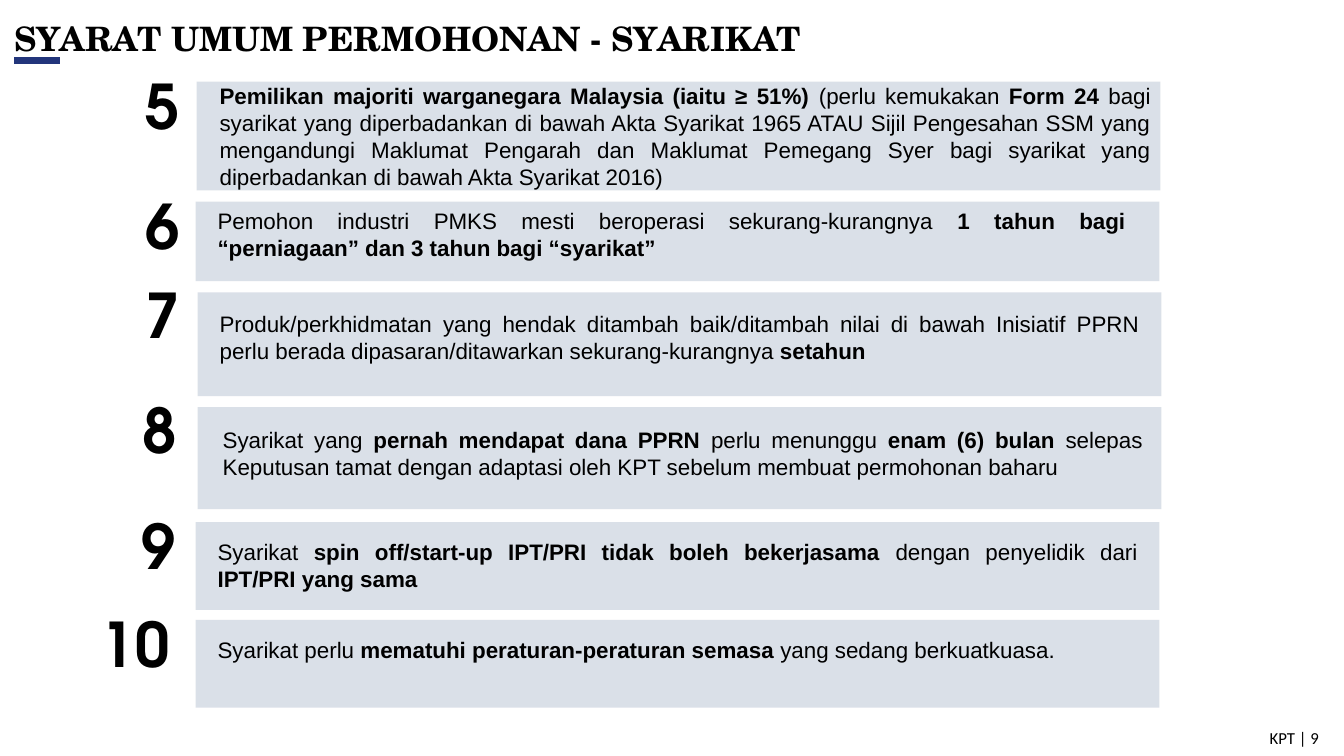
from lxml import etree
from pptx import Presentation
from pptx.dml.color import RGBColor
from pptx.enum.shapes import MSO_CONNECTOR as Link, MSO_SHAPE as Shape
from pptx.enum.text import MSO_ANCHOR as Anchor, MSO_AUTO_SIZE as Auto, PP_ALIGN as Align
from pptx.oxml.ns import qn
from pptx.util import Pt

PX = 9144  # 100 px to the inch
BLACK = RGBColor(0x00, 0x00, 0x00)
NAVY = RGBColor(0x22, 0x35, 0x7B)
PALE = RGBColor(0xD5, 0xDB, 0xE5)

# number, its box (left, top, width), panel (left, top, height),
# text box (left, top, width, height), text with bold parts between asterisks
ROWS = [
    ("5", (134, 62, 39), (195, 81, 108), (208, 77, 943, 145),
     "*Pemilikan majoriti warganegara Malaysia (iaitu ≥ 51%)* (perlu kemukakan "
     "*Form 24 *bagi syarikat yang diperbadankan di bawah Akta Syarikat 1965 ATAU "
     "Sijil Pengesahan SSM yang mengandungi Maklumat Pengarah dan Maklumat Pemegang "
     "Syer bagi syarikat yang diperbadankan di bawah Akta Syarikat 2016)"),
    ("6", (134, 182, 39), (194, 200, 79), (206, 201, 920, 64),
     "Pemohon industri PMKS mesti beroperasi sekurang-kurangnya "
     "*1 tahun bagi “perniagaan” dan 3 tahun bagi “syarikat”*"),
    ("7", (134, 270, 37), (196, 290, 103), (208, 303, 932, 64),
     "Produk/perkhidmatan yang hendak ditambah baik/ditambah nilai di bawah Inisiatif "
     "PPRN perlu berada dipasaran/ditawarkan sekurang-kurangnya *setahun*"),
    ("8", (132, 384, 37), (196, 404, 101), (211, 418, 932, 64),
     "Syarikat yang *pernah mendapat dana PPRN *perlu menunggu *enam (6) bulan *"
     "selepas Keputusan tamat dengan adaptasi oleh KPT sebelum membuat permohonan baharu"),
    ("9", (131, 499, 37), (194, 518, 87), (206, 529, 932, 64),
     "Syarikat *spin off/start-up IPT/PRI tidak boleh bekerjasama *"
     "dengan penyelidik dari *IPT/PRI yang sama*"),
    ("10", (89, 596, 90), (194, 615, 87), (206, 626, 932, 37),
     "Syarikat perlu *mematuhi peraturan-peraturan semasa *yang sedang berkuatkuasa."),
]


def style(para, face, size, align, bold=None):
    para.alignment = align
    font = para.font
    font.name, font.size, font.bold = face, Pt(size), bold
    font.color.rgb = BLACK


def add_text(left, top, width, height):
    """Add a wrapping text box and return its frame."""
    box = slide.shapes.add_textbox(left * PX, top * PX, width * PX, height * PX)
    box.text_frame.word_wrap = True
    return box.text_frame


deck = Presentation()
deck.slide_width, deck.slide_height = 1333 * PX, 750 * PX
slide = deck.slides.add_slide(deck.slide_layouts[5])

title = slide.shapes.title
title.left, title.top, title.width, title.height = 14 * PX, 15 * PX, 1024 * PX, 46 * PX
frame = title.text_frame
frame.text = "SYARAT UMUM PERMOHONAN - SYARIKAT"
frame.auto_size, frame.vertical_anchor = Auto.NONE, Anchor.MIDDLE
frame.margin_left = frame.margin_right = 0
style(frame.paragraphs[0], "TeX Gyre Schola", 24, Align.LEFT, True)

rule = slide.shapes.add_connector(Link.STRAIGHT, 14 * PX, 60 * PX, 60 * PX, 60 * PX)
rule.line.color.rgb, rule.line.width = NAVY, Pt(4.5)
etree.SubElement(rule._element.spPr, qn("a:effectLst"))

for number, (left, top, width), (x, y, height), area, text in ROWS:
    panel = slide.shapes.add_shape(Shape.RECTANGLE, x * PX, y * PX, 956 * PX, height * PX)
    panel.shadow.inherit = False
    panel.line.fill.background()
    panel.fill.solid()
    panel.fill.fore_color.rgb = PALE
    tint = panel._element.spPr.find(".//" + qn("a:srgbClr"))
    etree.SubElement(tint, qn("a:alpha"), val="86000")

    para = add_text(*area).paragraphs[0]
    style(para, "Arial", 16, Align.JUSTIFY)
    for i, part in enumerate(text.split("*")):
        if part:
            run = para.add_run()
            run.text, run.font.bold = part, i % 2 == 1

    frame = add_text(left, top, width, 84)
    frame.text = number
    style(frame.paragraphs[0], "TeX Gyre Adventor", 44, Align.CENTER, True)

frame = add_text(1018, 712, 300, 40)
frame.text = "KPT | 9"
frame.vertical_anchor = Anchor.MIDDLE
style(frame.paragraphs[0], "Calibri", 12, Align.RIGHT)

deck.save("out.pptx")
